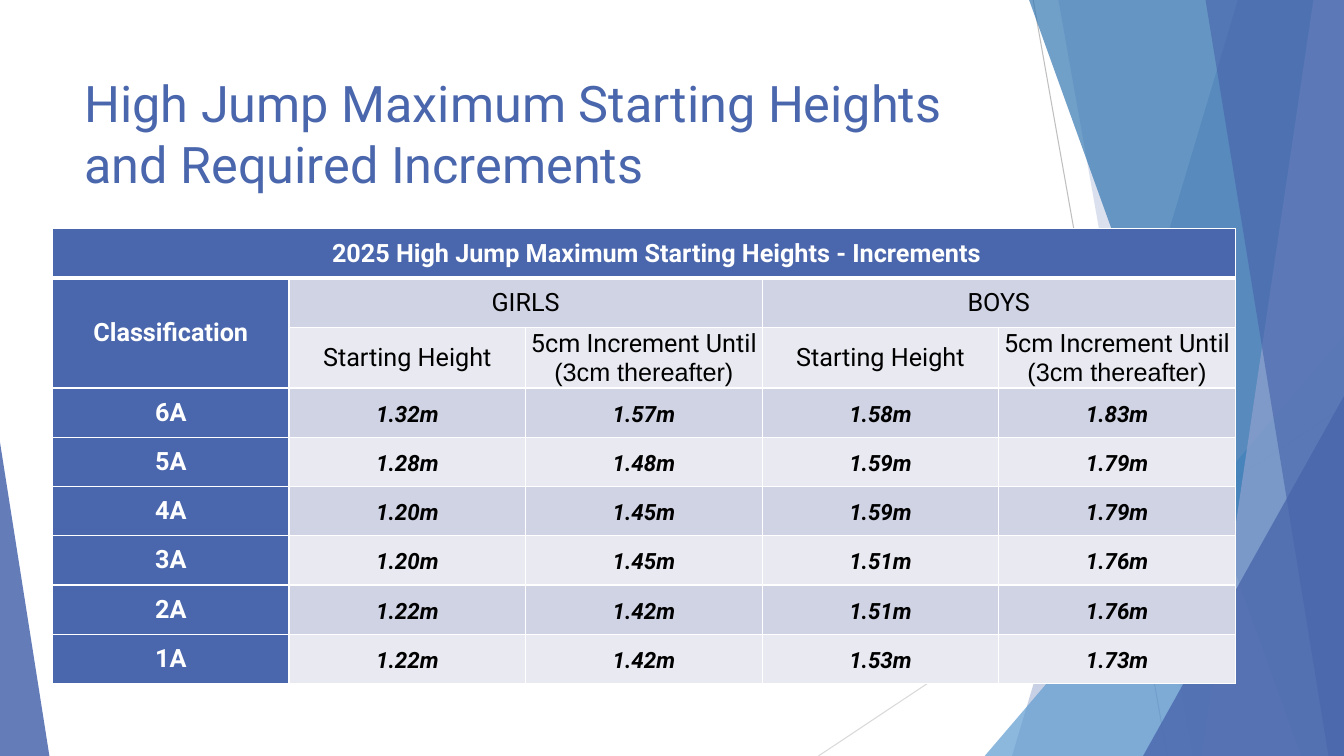
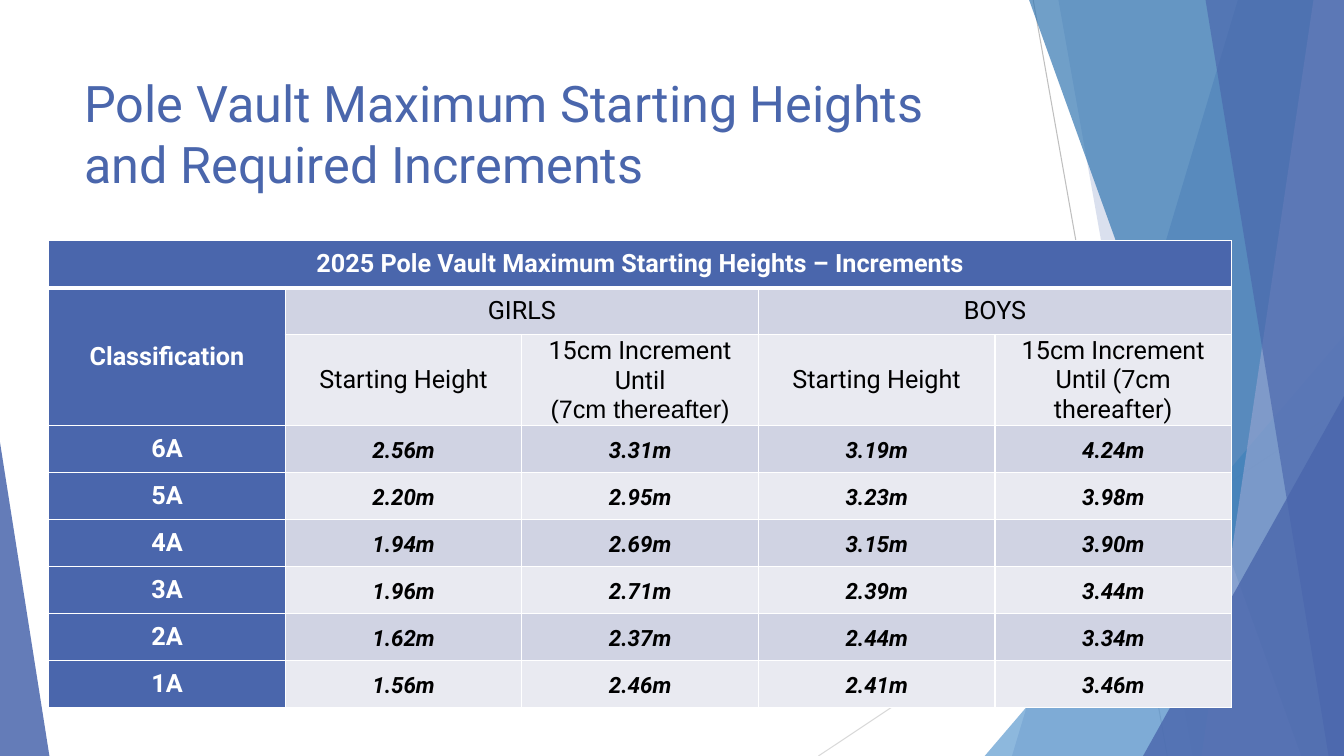
"""Build two slides of starting heights for field events."""
from dataclasses import dataclass

from lxml.etree import SubElement as Sub
from pptx import Presentation as Deck
from pptx.dml.color import RGBColor as Rgb
from pptx.enum.shapes import MSO_CONNECTOR as Link, MSO_SHAPE as Form
from pptx.enum.text import MSO_ANCHOR as Anchor, PP_ALIGN as Align
from pptx.oxml.ns import qn
from pptx.util import Pt

WIDE, HIGH = 960, 540
BLUE, SKY, DEEP, PALE = "4A66AC", "629DD1", "3477B2", "90A2CF"
WHITE, BLACK = "FFFFFF", "000000"
BANDS = ("E9EAF1", "D0D3E3")
FONT, PLAIN = "Roboto", "Arial"
COL = 169


@dataclass(frozen=True)
class Line:
    start: tuple[float, float]
    end: tuple[float, float]
    tint: str


@dataclass(frozen=True)
class Band:
    top: float
    foot: float
    tint: str
    alpha: int


@dataclass(frozen=True)
class Wedge:
    left: float
    top: float
    width: float
    tip: float
    tint: str
    alpha: int


@dataclass(frozen=True)
class Event:
    name: str
    dash: str
    left: float
    top: float
    row: float
    tall: float
    indent: float
    girls: str
    boys: str
    marks: tuple[str, ...]


DECOR = (
    Line((738, 0), (833.8, HIGH), "BFBFBF"),
    Line((WIDE, 290.2), (584.6, HIGH), "D9D9D9"),
    Band(884.2, 722.9, BLUE, 30),
    Band(756, 851.8, BLUE, 20),
    Wedge(703.4, 239.8, 256.6, 1, SKY, 72),
    Band(735.1, 929.5, DEEP, 70),
    Band(938.2, 858.2, PALE, 70),
    Band(861.1, 949, BLUE, 65),
    Wedge(816.5, 283, 143.5, 1, BLUE, 80),
    Wedge(0, 316, 35.3, 0, BLUE, 85),
)

EVENTS = (
    Event("High Jump", "-", 37.5, 163.5, 35.2, 41.8, 18,
          "5cm Increment Until\n(3cm thereafter)",
          "5cm Increment Until\n(3cm thereafter)",
          ("6A 1.32m 1.57m 1.58m 1.83m",
           "5A 1.28m 1.48m 1.59m 1.79m",
           "4A 1.20m 1.45m 1.59m 1.79m",
           "3A 1.20m 1.45m 1.51m 1.76m",
           "2A 1.22m 1.42m 1.51m 1.76m",
           "1A 1.22m 1.42m 1.53m 1.73m")),
    Event("Pole Vault", "–", 34.8, 172, 33.6, 63.3, 0,
          "15cm Increment Until\n(7cm thereafter)",
          "15cm Increment Until (7cm thereafter)",
          ("6A 2.56m 3.31m 3.19m 4.24m",
           "5A 2.20m 2.95m 3.23m 3.98m",
           "4A 1.94m 2.69m 3.15m 3.90m",
           "3A 1.96m 2.71m 2.39m 3.44m",
           "2A 1.62m 2.37m 2.44m 3.34m",
           "1A 1.56m 2.46m 2.41m 3.46m")),
)


def shade(code: str) -> Rgb:
    return Rgb.from_string(code)


def style(para, size: float, tint: str, bold: bool = False,
          slant: bool = False, face: str = FONT) -> None:
    for run in para.runs:
        font = run.font
        font.name, font.size = face, Pt(size)
        font.bold, font.italic = bold, slant
        font.color.rgb = shade(tint)


def paint(shape, tint: str, alpha: int) -> None:
    shape.shadow.inherit = False
    shape.line.fill.background()
    shape.fill.solid()
    shape.fill.fore_color.rgb = shade(tint)
    node = shape._element.spPr.find(".//" + qn("a:srgbClr"))
    Sub(node, qn("a:alpha"), val=str(alpha * 1000))


def draw_line(slide, line: Line) -> None:
    ends = [Pt(n) for n in line.start + line.end]
    link = slide.shapes.add_connector(Link.STRAIGHT, *ends)
    link.line.color.rgb = shade(line.tint)
    link.line.width = Pt(0.75)
    Sub(link._element.spPr, qn("a:effectLst"))


def draw_band(slide, band: Band) -> None:
    pen = slide.shapes.build_freeform(Pt(band.top), 0)
    pen.add_line_segments([(Pt(WIDE), 0), (Pt(WIDE), Pt(HIGH)),
                           (Pt(band.foot), Pt(HIGH))])
    paint(pen.convert_to_shape(), band.tint, band.alpha)


def draw_wedge(slide, wedge: Wedge) -> None:
    shape = slide.shapes.add_shape(
        Form.ISOSCELES_TRIANGLE, Pt(wedge.left), Pt(wedge.top),
        Pt(wedge.width), Pt(HIGH - wedge.top))
    shape.adjustments[0] = wedge.tip
    paint(shape, wedge.tint, wedge.alpha)


PENS = {Line: draw_line, Band: draw_band, Wedge: draw_wedge}


def draw_title(slide, text: str) -> None:
    frame = slide.shapes.add_textbox(
        Pt(53.3), Pt(48.2), Pt(676.8), Pt(103.7)).text_frame
    frame.word_wrap = True
    frame.text = text
    style(frame.paragraphs[0], 36, BLUE)


def edge(cell, row: int) -> None:
    props = cell._tc.get_or_add_tcPr()
    thick = {(0, "B"), (1, "T")}
    for side in "LRTB":
        width = Pt(3 if (row, side) in thick else 1)
        line = Sub(props, qn("a:ln" + side), w=str(width))
        Sub(Sub(line, qn("a:solidFill")), qn("a:srgbClr"), val=WHITE)


def fill_cell(cell, row: int, col: int, text: str) -> None:
    head = row == 0 or col == 0
    mark = row > 2 and not head
    edge(cell, row)
    cell.fill.solid()
    cell.fill.fore_color.rgb = shade(BLUE if head else BANDS[row % 2])
    cell.vertical_anchor = Anchor.MIDDLE
    cell.margin_top = cell.margin_bottom = 0
    cell.margin_left = cell.margin_right = Pt(0 if col in (2, 4) else 5)
    cell.text_frame.text = text
    for num, para in enumerate(cell.text_frame.paragraphs):
        para.alignment = Align.CENTER
        if mark:
            para.line_spacing, para.space_after = 1.15, Pt(8)
        style(para, 16 if mark else 18, WHITE if head else BLACK,
              head or mark, mark, PLAIN if num else FONT)


def draw_table(slide, event: Event) -> None:
    start = "Starting Height"
    title = f"2025 {event.name} Maximum Starting Heights {event.dash} Increments"
    rows = [[title, "", "", "", ""],
            ["Classification", "GIRLS", "", "BOYS", ""],
            ["", start, event.girls, start, event.boys],
            *(mark.split() for mark in event.marks)]
    highs = [event.tall if n == 2 else event.row for n in range(len(rows))]
    grid = slide.shapes.add_table(
        len(rows), 5, Pt(event.left), Pt(event.top),
        Pt(5 * COL), Pt(sum(highs))).table
    grid.first_row = grid.horz_banding = False
    for col in grid.columns:
        col.width = Pt(COL)
    for row, texts in enumerate(rows):
        grid.rows[row].height = Pt(highs[row])
        for col, text in enumerate(texts):
            fill_cell(grid.cell(row, col), row, col, text)
    for first, last in (((0, 0), (0, 4)), ((1, 0), (2, 0)),
                        ((1, 1), (1, 2)), ((1, 3), (1, 4))):
        grid.cell(*first).merge(grid.cell(*last))
    if event.indent:
        para = grid.cell(0, 0).text_frame.paragraphs[0]
        para._p.get_or_add_pPr().set("marL", str(Pt(event.indent)))


def main() -> None:
    deck = Deck()
    deck.slide_width, deck.slide_height = Pt(WIDE), Pt(HIGH)
    for event in EVENTS:
        slide = deck.slides.add_slide(deck.slide_layouts[6])
        for part in DECOR:
            PENS[type(part)](slide, part)
        draw_title(slide, f"{event.name} Maximum Starting Heights and Required Increments")
        draw_table(slide, event)
    deck.save("out.pptx")


if __name__ == "__main__":
    main()
